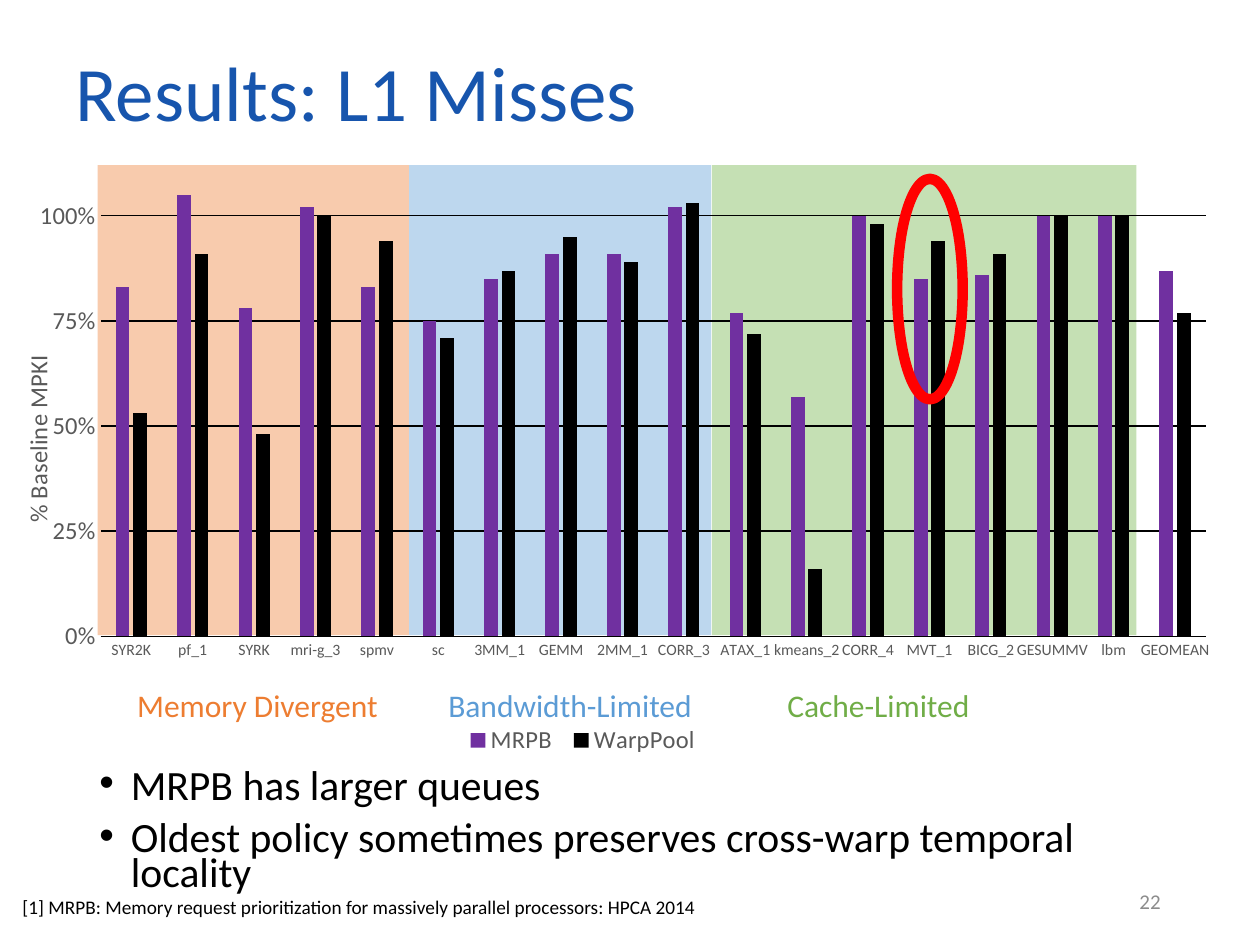
from lxml.etree import SubElement
from pptx import Presentation
from pptx.chart.data import CategoryChartData
from pptx.dml.color import RGBColor
from pptx.enum.chart import XL_CHART_TYPE, XL_LEGEND_POSITION, XL_TICK_MARK
from pptx.enum.shapes import MSO_SHAPE
from pptx.enum.text import MSO_ANCHOR, PP_ALIGN
from pptx.oxml import parse_xml
from pptx.oxml.ns import nsdecls, qn
from pptx.util import Inches, Pt

FONT = "Calibri"
COLORS = {
    "title": "1755AD", "text": "000000", "axis": "595959", "number": "8C8C8C",
    "mrpb": "7030A0", "warppool": "000000", "highlight": "FF0000",
}
# name, band left, band width, label left (% of slide width), band and label colours
GROUPS = [
    ("Cache-Limited", 56.5, 33.7, 61.5, "C5E0B4", "70AD47"),
    ("Bandwidth-Limited", 32.45, 24, 34.6, "BDD7EE", "5B9BD5"),
    ("Memory Divergent", 7.75, 24.7, 9.9, "F8CBAD", "ED7D31"),
]
CATEGORIES = [
    "SYR2K", "pf_1", "SYRK", "mri-g_3", "spmv", "sc", "3MM_1", "GEMM", "2MM_1",
    "CORR_3", "ATAX_1", "kmeans_2", "CORR_4", "MVT_1", "BICG_2", "GESUMMV",
    "lbm", "GEOMEAN",
]
SERIES = {
    "MRPB": ("mrpb", [0.83, 1.05, 0.78, 1.02, 0.83, 0.75, 0.85, 0.91, 0.91,
                      1.02, 0.77, 0.57, 1, 0.85, 0.86, 1, 1, 0.87]),
    "WarpPool": ("warppool", [0.53, 0.91, 0.48, 1, 0.94, 0.71, 0.87, 0.95, 0.89,
                              1.03, 0.72, 0.16, 0.98, 0.94, 0.91, 1, 1, 0.77]),
}
# shares of the chart's size
PLOT_AREA = {"x": 0.107, "y": 0.033, "w": 0.878, "h": 0.671}
LEGEND_AREA = {"x": 0.39, "y": 0.83, "w": 0.2, "h": 0.05}
AXIS_TITLE_AT = {"x": 0.04, "y": 0.29}

prs = Presentation()
prs.slide_width, prs.slide_height = Inches(10), Inches(7.5)


def share(left, top, width, height):
    """Turn percentages of the slide's size into a box in EMU."""
    col, row = prs.slide_width / 100, prs.slide_height / 100
    return [round(n) for n in (left * col, top * row, width * col, height * row)]


def set_all(obj, **values):
    for name, value in values.items():
        setattr(obj, name, value)


def style_font(font, size, color):
    set_all(font, name=FONT, size=Pt(size), bold=False)
    font.color.rgb = RGBColor.from_string(color)


def style_line(line, color, width):
    line.color.rgb = RGBColor.from_string(color)
    line.width = Pt(width)


def add_text(s, box, lines, size, color, anchor=MSO_ANCHOR.TOP, **para_format):
    tf = s.shapes.add_textbox(*box).text_frame
    set_all(tf, word_wrap=True, vertical_anchor=anchor)
    for i, line in enumerate(lines):
        p = tf.add_paragraph() if i else tf.paragraphs[0]
        set_all(p, **para_format)
        r = p.add_run()
        r.text = line
        style_font(r.font, size, color)
    return tf


def add_bands(s, top, height):
    for _, left, width, _, fill, _ in GROUPS:
        sp = s.shapes.add_shape(MSO_SHAPE.ROUNDED_RECTANGLE,
                                *share(left, top, width, height))
        sp.adjustments[0] = 0
        sp.shadow.inherit = False
        sp.fill.solid()
        sp.fill.fore_color.rgb = RGBColor.from_string(fill)
        sp.line.fill.background()


def add_group_labels(s, top, height):
    for name, _, _, left, _, color in GROUPS:
        add_text(s, share(left, top, 24.7, height), [name], 18, color,
                 line_spacing=0.8, space_before=Pt(10))


def pin_layout(element, area, index, target=""):
    """Place a chart part at fixed shares of the chart's size."""
    tags = target + '<c:xMode val="edge"/><c:yMode val="edge"/>'
    tags += "".join(f'<c:{k} val="{v}"/>' for k, v in area.items())
    for old in element.findall(qn("c:layout")):
        element.remove(old)
    element.insert(index, parse_xml(
        f'<c:layout {nsdecls("c")}><c:manualLayout>{tags}</c:manualLayout></c:layout>'))


def style_axes(chart):
    cat, val = chart.category_axis, chart.value_axis
    for axis, size in ((cat, 9), (val, 14)):
        set_all(axis, major_tick_mark=XL_TICK_MARK.NONE,
                minor_tick_mark=XL_TICK_MARK.NONE)
        style_font(axis.tick_labels.font, size, COLORS["axis"])
    style_line(cat.format.line, COLORS["text"], 0.75)
    body = cat._element.find(qn("c:txPr")).find(qn("a:bodyPr"))
    body.set("rot", "-60000000")
    body.set("vert", "horz")

    set_all(val, minimum_scale=0, maximum_scale=1.1, major_unit=0.25,
            has_major_gridlines=True)
    set_all(val.tick_labels, number_format="0%", number_format_is_linked=False)
    val.format.line.fill.background()
    style_line(val.major_gridlines.format.line, COLORS["text"], 0.75)
    r = val.axis_title.text_frame.paragraphs[0].add_run()
    r.text = "% Baseline MPKI"
    style_font(r.font, 14, COLORS["axis"])


def add_miss_chart(s, box):
    data = CategoryChartData(number_format="0%")
    data.categories = CATEGORIES
    for name, (_, values) in SERIES.items():
        data.add_series(name, values)
    chart = s.shapes.add_chart(XL_CHART_TYPE.COLUMN_CLUSTERED, *box, data).chart
    style_font(chart.font, 10, COLORS["text"])
    set_all(chart, has_title=False, has_legend=True)
    set_all(chart.legend, position=XL_LEGEND_POSITION.BOTTOM, include_in_layout=False)
    style_font(chart.legend.font, 14, COLORS["axis"])

    plot = chart.plots[0]
    set_all(plot, gap_width=219, overlap=-27, vary_by_categories=False)
    for series, (color, _) in zip(plot.series, SERIES.values()):
        series.format.fill.solid()
        series.format.fill.fore_color.rgb = RGBColor.from_string(COLORS[color])
    style_axes(chart)
    pin_layout(chart._chartSpace.chart.plotArea, PLOT_AREA, 0,
               '<c:layoutTarget val="inner"/>')
    pin_layout(chart.legend._element, LEGEND_AREA, 1)
    pin_layout(chart.value_axis.axis_title._element, AXIS_TITLE_AT, 1)


def add_highlight(s, box):
    sp = s.shapes.add_shape(MSO_SHAPE.OVAL, *box)
    sp.shadow.inherit = False
    sp.fill.background()
    style_line(sp.line, COLORS["highlight"], 6)


def add_bullets(s, box, lines):
    tf = add_text(s, box, lines, 23.8, COLORS["text"],
                  line_spacing=0.7, space_before=Pt(10))
    for p in tf.paragraphs:
        pPr = p._p.get_or_add_pPr()
        pPr.set("marL", str(Inches(0.25)))
        pPr.set("indent", str(-Inches(0.25)))
        SubElement(pPr, qn("a:buFont")).set("typeface", "Arial")
        SubElement(pPr, qn("a:buChar")).set("char", "•")


def build_results_slide():
    s = prs.slides.add_slide(prs.slide_layouts[6])
    add_bands(s, 17.47, 49.73)
    add_text(s, share(70.6, 92.67, 22.5, 5.33), ["22"], 12, COLORS["number"],
             MSO_ANCHOR.MIDDLE, alignment=PP_ALIGN.RIGHT)
    add_miss_chart(s, share(-2.7, 16, 99.9, 72.93))
    add_text(s, share(5, 3.47, 90, 12.27), ["Results: L1 Misses"], 44,
             COLORS["title"], MSO_ANCHOR.MIDDLE)
    add_group_labels(s, 72.67, 4.67)
    add_highlight(s, share(71.2, 18.93, 5.2, 23.33))
    add_bullets(s, share(6.9, 81.07, 86.2, 15.07), [
        "MRPB has larger queues",
        "Oldest policy sometimes preserves cross-warp temporal locality",
    ])
    add_text(s, share(0.8, 94.13, 95.5, 3.87), [
        "[1] MRPB: Memory request prioritization for massively parallel "
        "processors: HPCA 2014"], 11, COLORS["text"])


if __name__ == "__main__":
    build_results_slide()
    prs.save("out.pptx")
